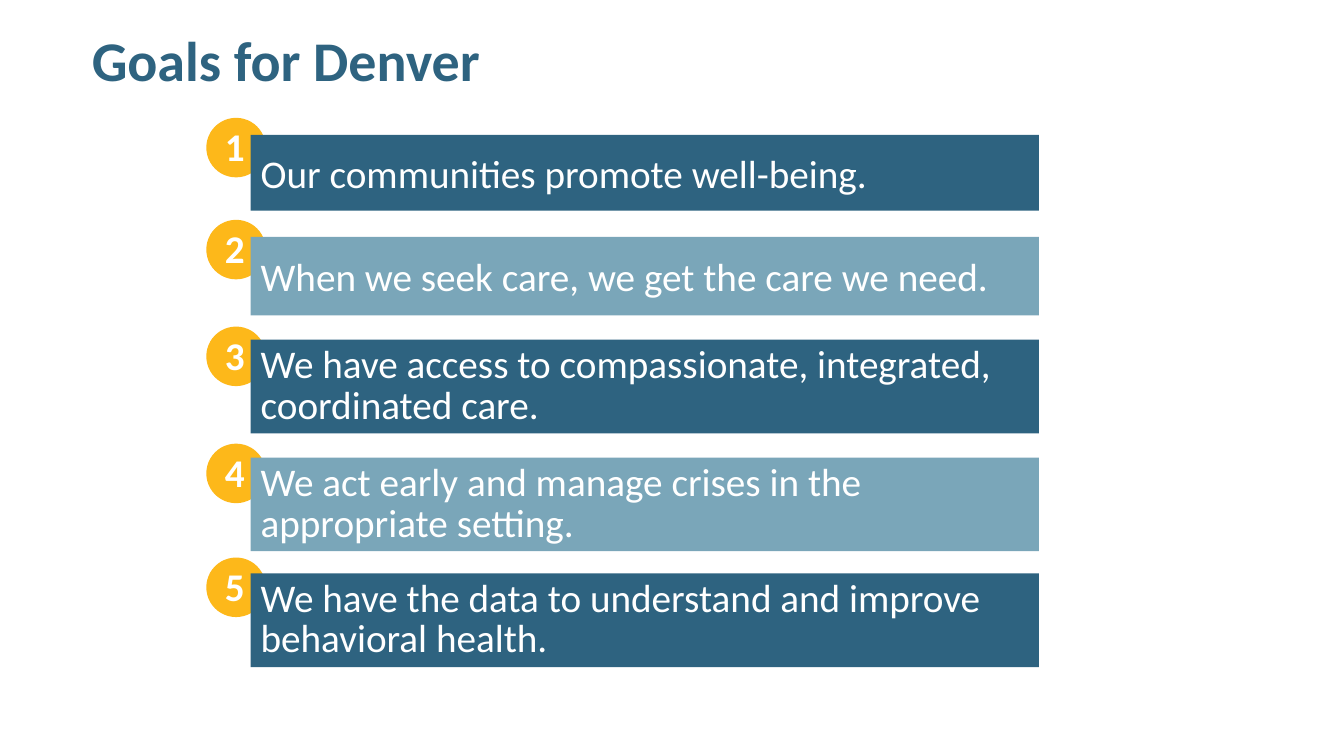
from pptx import Presentation
from pptx.dml.color import RGBColor
from pptx.enum.shapes import MSO_SHAPE as Shape
from pptx.enum.text import MSO_ANCHOR as Anchor, MSO_AUTO_SIZE as AutoSize, PP_ALIGN as Align
from pptx.util import Cm, Pt

NAVY = RGBColor(0x2E, 0x63, 0x80)
SKY = RGBColor(0x7A, 0xA6, 0xB9)
GOLD = RGBColor(0xFD, 0xB8, 0x1A)
WHITE = RGBColor(0xFF, 0xFF, 0xFF)

# badge top, bar top, bar height (cm), line spacing, wording
GOALS = [
    (2.97, 3.4, 1.91, None, "Our communities promote well-being."),
    (5.54, 5.97, 1.98, None, "When we seek care, we get the care we need."),
    (8.23, 8.56, 2.36, Pt(29), "We have access to compassionate, integrated, coordinated care."),
    (11.18, 11.53, 2.36, Pt(29), "We act early and manage crises in the appropriate setting."),
    (14.05, 14.45, 2.36, Pt(29), "We have the data to understand and improve behavioral health."),
]


def write(shape, text, size, color, bold, spacing=None):
    frame = shape.text_frame
    frame.word_wrap = True
    frame.text = text
    para = frame.paragraphs[0]
    para.alignment = Align.LEFT
    para.line_spacing = spacing
    look = {"name": "Calibri", "size": Pt(size), "bold": bold}
    for name, value in look.items():
        setattr(para.runs[0].font, name, value)
    para.runs[0].font.color.rgb = color
    return frame


def add_filled(kind, left, top, width, height, color):
    shape = slide.shapes.add_shape(kind, Cm(left), Cm(top), Cm(width), Cm(height))
    shape.shadow.inherit = False
    shape.fill.solid()
    shape.fill.fore_color.rgb = color
    shape.line.fill.background()
    return shape


deck = Presentation()
deck.slide_width, deck.slide_height = Cm(33.87), Cm(19.05)
slide = deck.slides.add_slide(deck.slide_layouts[5])

title = slide.shapes.title
title.left, title.top, title.width, title.height = Cm(2.06), Cm(0.64), Cm(29.21), Cm(1.9)
frame = write(title, "Goals for Denver", 40, NAVY, True, 0.9)
frame.vertical_anchor = Anchor.MIDDLE
frame.auto_size = AutoSize.NONE

for number, (badge_top, bar_top, bar_height, spacing, goal) in enumerate(GOALS, 1):
    add_filled(Shape.OVAL, 5.2, badge_top, 1.5, 1.5, GOLD)
    label = slide.shapes.add_textbox(Cm(5.42), Cm(badge_top), Cm(1.75), Cm(1.45))
    frame = write(label, str(number), 28, WHITE, True)
    frame.auto_size = AutoSize.SHAPE_TO_FIT_TEXT

    bar = add_filled(Shape.RECTANGLE, 6.32, bar_top, 19.86, bar_height, NAVY if number % 2 else SKY)
    frame = write(bar, goal, 28, WHITE, False, spacing)
    frame.vertical_anchor = Anchor.MIDDLE

deck.save("out.pptx")
